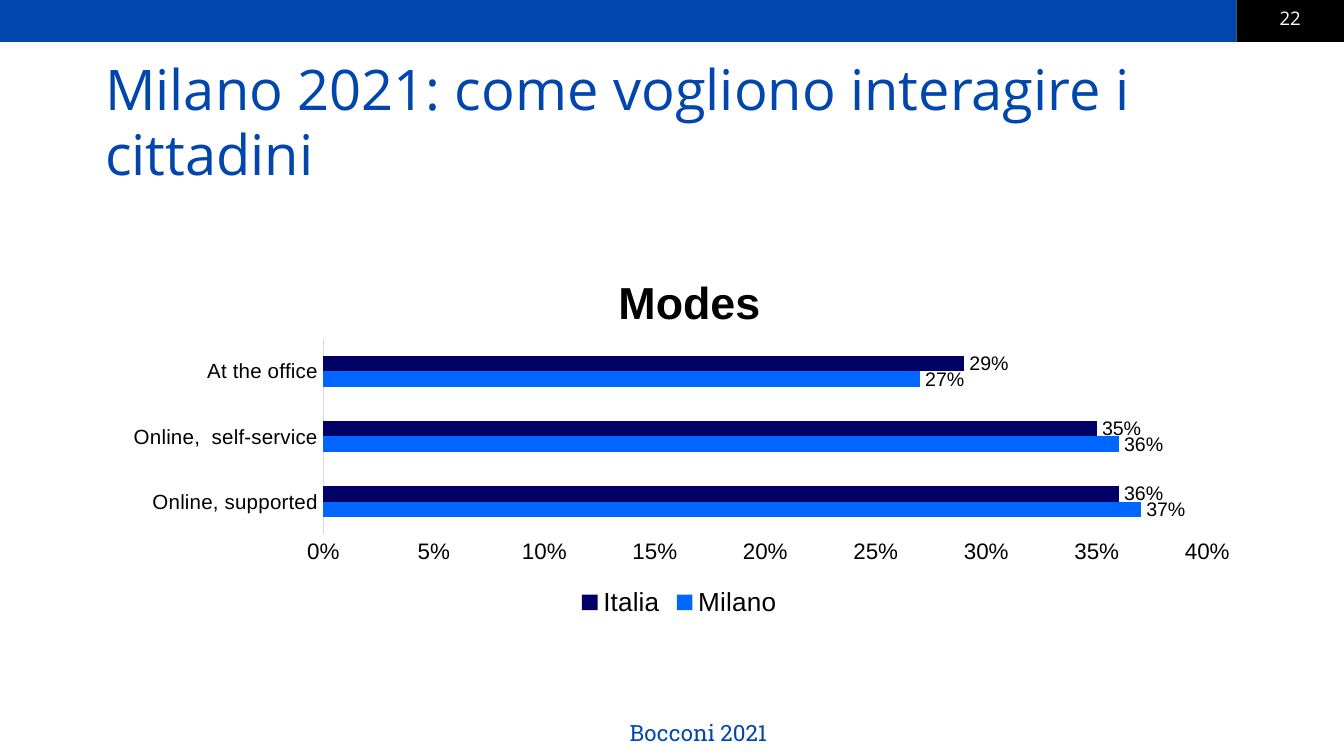
import pptx
import pptx.chart.data
import pptx.dml.color
import pptx.enum.chart
import pptx.enum.shapes
import pptx.enum.text
import pptx.oxml
import pptx.oxml.ns
import pptx.util

Pt = pptx.util.Pt
ALIGN = pptx.enum.text.PP_ALIGN
ANCHOR = pptx.enum.text.MSO_ANCHOR

PAGE_WIDTH, PAGE_HEIGHT = 720, 405
COLORS = {"blue": "0046AD", "black": "000000", "white": "FFFFFF",
          "axis": "D9D9D9", "milano": "0066FF", "italia": "000066"}

BAR_SPLIT, BAR_HEIGHT = 662.5, 22.5
NUMBER_BOX = (BAR_SPLIT, 0, PAGE_WIDTH - BAR_SPLIT, BAR_HEIGHT)
BANDS = [((0, 0, BAR_SPLIT, BAR_HEIGHT), "blue"), (NUMBER_BOX, "black")]

LEFT, WIDTH = 56.4, 615
TEXTS = [
    dict(text="22", at=NUMBER_BOX, size=10, font="Open Sans", color="white",
         align=ALIGN.CENTER, anchor=ANCHOR.TOP, inset=3.6),
    dict(text="Milano 2021: come vogliono interagire i cittadini",
         at=(LEFT, 29.5, WIDTH, 70.6), size=30, font="Open Sans", color="blue",
         align=ALIGN.LEFT, anchor=ANCHOR.BOTTOM, spacing=35),
    dict(text="Bocconi 2021", at=(205.5, 385, 337.5, 14.5), size=12,
         font="Roboto Slab", color="blue", align=ALIGN.CENTER,
         anchor=ANCHOR.BOTTOM),
]

CHART_TITLE = "Modes"
CHART_BOX = (LEFT, 128, WIDTH, 205.5)
CATEGORIES = ["Online, supported", "Online,  self-service", "At the office"]
SERIES = [("Milano", (0.37, 0.36, 0.27), "milano"),
          ("Italia", (0.36, 0.35, 0.29), "italia")]
TITLE_LAYOUT = {"x": 0.44, "y": 0.07}
PLOT_LAYOUT = {"x": 0.19, "y": 0.26, "w": 0.77, "h": 0.51}


def rgb(name):
    return pptx.dml.color.RGBColor.from_string(COLORS[name])


def style_font(font, size, name="Arial", color="black", bold=False):
    font.size, font.name, font.bold = Pt(size), name, bold
    font.color.rgb = rgb(color)


def add_band(page, at, color):
    band = page.shapes.add_shape(
        pptx.enum.shapes.MSO_SHAPE.RECTANGLE, *map(Pt, at))
    band.shadow.inherit = False
    band.fill.solid()
    band.fill.fore_color.rgb = rgb(color)
    band.line.fill.background()


def add_text(page, text, at, size, font, color, align, anchor,
             inset=0, spacing=None):
    frame = page.shapes.add_textbox(*map(Pt, at)).text_frame
    frame.word_wrap = True
    frame.vertical_anchor = anchor
    frame.margin_left = frame.margin_right = Pt(inset)
    frame.margin_top = frame.margin_bottom = Pt(inset)
    frame.text = text
    para = frame.paragraphs[0]
    para.alignment = align
    if spacing:
        para.line_spacing = Pt(spacing)
    style_font(para.runs[0].font, size, font, color)


def manual_layout(parent, fractions, inner=False):
    """Place a chart part at fractions of the chart area."""
    qn = pptx.oxml.ns.qn
    for old in parent.findall(qn("c:layout")):
        parent.remove(old)
    tags = '<c:layoutTarget val="inner"/>' if inner else ""
    tags += "".join(f'<c:{key}Mode val="edge"/>' for key in "xy")
    tags += "".join(f'<c:{key} val="{value}"/>'
                    for key, value in fractions.items())
    layout = pptx.oxml.parse_xml(
        f'<c:layout {pptx.oxml.ns.nsdecls("c")}>'
        f'<c:manualLayout>{tags}</c:manualLayout></c:layout>')
    text = parent.find(qn("c:tx"))
    parent.insert(0 if text is None else 1, layout)


def add_modes_chart(page):
    data = pptx.chart.data.CategoryChartData(number_format="0%")
    data.categories = CATEGORIES
    for name, values, _ in SERIES:
        data.add_series(name, values)
    kinds = pptx.enum.chart
    chart = page.shapes.add_chart(
        kinds.XL_CHART_TYPE.BAR_CLUSTERED, *map(Pt, CHART_BOX), data).chart
    style_font(chart.font, 20)

    chart.has_title = True
    title = chart.chart_title
    title.text_frame.text = CHART_TITLE
    style_font(title.text_frame.paragraphs[0].runs[0].font, 24, bold=True)
    title.include_in_layout = False
    manual_layout(title._element, TITLE_LAYOUT)

    chart.has_legend = True
    chart.legend.position = kinds.XL_LEGEND_POSITION.BOTTOM
    chart.legend.include_in_layout = False
    style_font(chart.legend.font, 14)

    for axis, size in ((chart.category_axis, 11), (chart.value_axis, 12)):
        axis.major_tick_mark = axis.minor_tick_mark = kinds.XL_TICK_MARK.NONE
        axis.has_major_gridlines = False
        style_font(axis.tick_labels.font, size)
    chart.category_axis.format.line.color.rgb = rgb("axis")
    chart.category_axis.format.line.width = Pt(0.75)
    scale = chart.value_axis
    scale.format.line.fill.background()
    scale.minimum_scale, scale.maximum_scale, scale.major_unit = 0, 0.4, 0.05
    scale.tick_labels.number_format = "0%"
    scale.tick_labels.number_format_is_linked = False

    plot = chart.plots[0]
    plot.vary_by_categories = False
    plot.gap_width, plot.overlap = 219, 0
    for series, (_, _, color) in zip(plot.series, SERIES):
        series.format.fill.solid()
        series.format.fill.fore_color.rgb = rgb(color)
        labels = series.data_labels
        labels.show_value = True
        labels.number_format = "0%"
        labels.number_format_is_linked = False
        labels.position = kinds.XL_LABEL_POSITION.OUTSIDE_END
        style_font(labels.font, 10.5)
    manual_layout(plot._element.getparent(), PLOT_LAYOUT, inner=True)


def main():
    deck = pptx.Presentation()
    deck.slide_width, deck.slide_height = Pt(PAGE_WIDTH), Pt(PAGE_HEIGHT)
    page = deck.slides.add_slide(deck.slide_layouts[6])
    for at, color in BANDS:
        add_band(page, at, color)
    for item in TEXTS:
        add_text(page, **item)
    add_modes_chart(page)
    deck.save("out.pptx")


if __name__ == "__main__":
    main()
